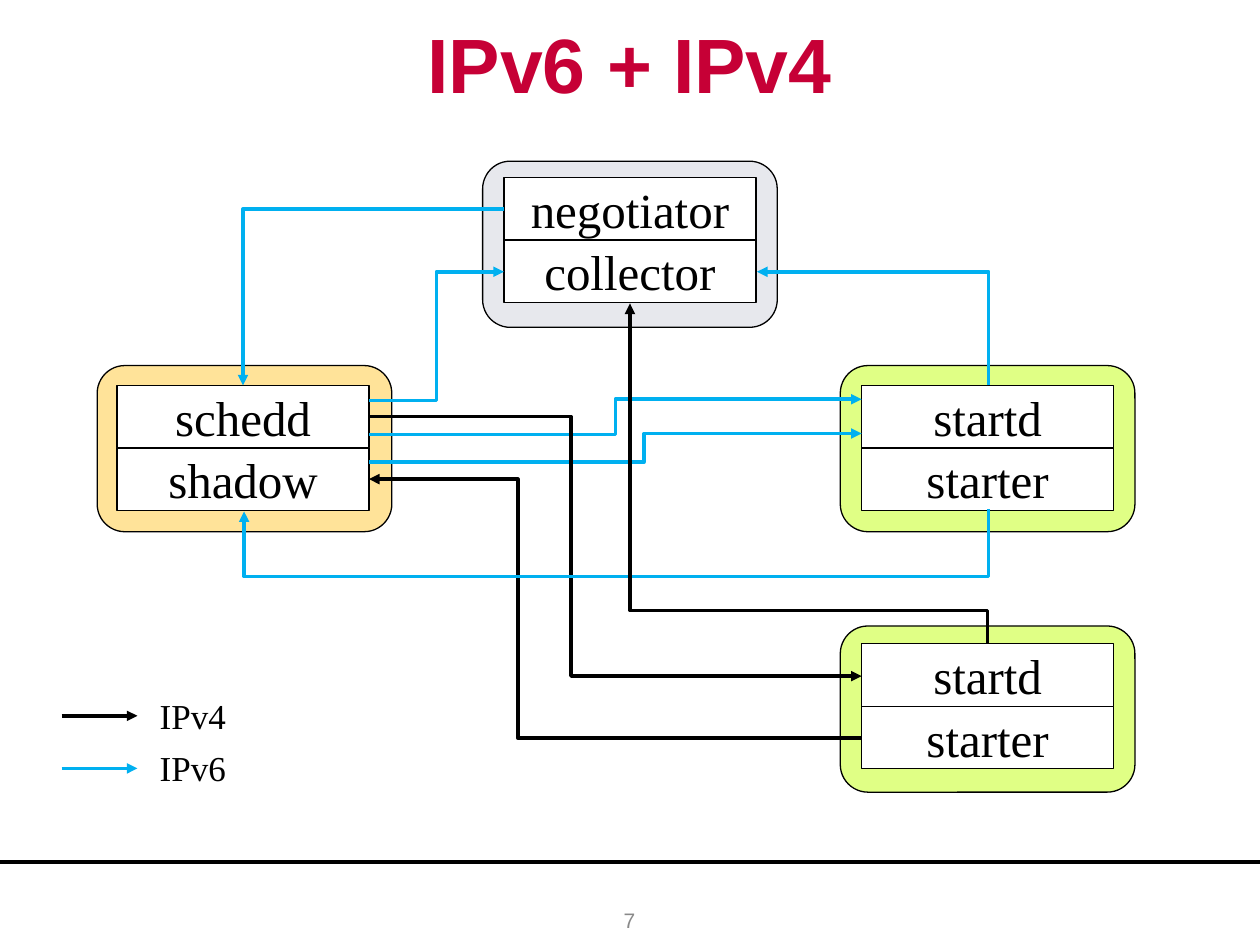
from lxml.etree import SubElement
from pptx import Presentation
from pptx.dml.color import RGBColor
from pptx.enum.shapes import MSO_CONNECTOR, MSO_SHAPE
from pptx.enum.text import MSO_ANCHOR, PP_ALIGN
from pptx.oxml.ns import qn
from pptx.util import Cm, Pt

BLACK, BLUE, WHITE = "000000", "00B0F0", "FFFFFF"
GREEN, ORANGE, GREY = "E0FF85", "FFE399", "E7E8ED"
SERIF, SANS = "Times New Roman", "Arial"
PROCESS_WIDTH, PROCESS_HEIGHT = 5.08, 1.26

# Machine: left, top, fill, left and top of the processes, their names
MACHINES = [
    (9.73, 3.25, GREY, 10.16, 3.58, ("negotiator", "collector")),
    (1.96, 7.37, ORANGE, 2.36, 7.77, ("schedd", "shadow")),
    (16.94, 7.37, GREEN, 17.37, 7.77, ("startd", "starter")),
    (16.94, 12.62, GREEN, 17.37, 12.98, ("startd", "starter")),
]

# Route: start, end, colour, position of the middle segment (None: one corner)
HORIZONTAL_ROUTES = [
    ((7.44, 8.08), (10.16, 5.48), BLUE, 8.8),
    ((10.16, 4.21), (4.9, 7.77), BLUE, None),
    ((7.44, 9.32), (17.37, 8.74), BLUE, 12.98),
    ((7.44, 8.76), (17.37, 8.05), BLUE, 12.41),
    ((17.37, 14.88), (7.44, 9.66), BLACK, 10.44),
    ((7.44, 8.4), (17.37, 13.63), BLACK, 11.51),
]
VERTICAL_ROUTES = [
    ((19.93, 7.77), (15.26, 5.48), BLUE, None),
    ((19.93, 10.27), (4.92, 10.31), BLUE, 11.62),
    ((19.91, 12.98), (12.7, 6.12), BLACK, 12.31),
]


def color(value):
    return RGBColor.from_string(value)


def write(shape, text, size, font, text_color, align, bold=False):
    frame = shape.text_frame
    frame.word_wrap = True
    frame.text = text
    paragraph = frame.paragraphs[0]
    paragraph.alignment = align
    paragraph.font.name = font
    paragraph.font.size = Pt(size)
    paragraph.font.bold = bold
    paragraph.font.color.rgb = color(text_color)


def add_text(slide, left, top, width, height, text, size, font, text_color,
             align=PP_ALIGN.CENTER, anchor=MSO_ANCHOR.MIDDLE, bold=False):
    box = slide.shapes.add_textbox(Cm(left), Cm(top), Cm(width), Cm(height))
    write(box, text, size, font, text_color, align, bold)
    box.text_frame.vertical_anchor = anchor


def add_box(slide, kind, left, top, width, height, fill):
    shape = slide.shapes.add_shape(kind, Cm(left), Cm(top), Cm(width), Cm(height))
    shape.shadow.inherit = False
    shape.fill.solid()
    shape.fill.fore_color.rgb = color(fill)
    shape.line.color.rgb = color(BLACK)
    shape.line.width = Pt(0.75)
    return shape


def add_machine(slide, left, top, fill, process_left, process_top, names):
    add_box(slide, MSO_SHAPE.ROUNDED_RECTANGLE, left, top, 5.94, 3.35, fill)
    for row, name in enumerate(names):
        process = add_box(slide, MSO_SHAPE.RECTANGLE, process_left,
                          process_top + row * PROCESS_HEIGHT,
                          PROCESS_WIDTH, PROCESS_HEIGHT, WHITE)
        write(process, name, 28, SERIF, BLACK, PP_ALIGN.CENTER)
        process.text_frame.vertical_anchor = MSO_ANCHOR.MIDDLE


def add_line(slide, kind, start, end, line_color, width=2, arrow=True):
    connector = slide.shapes.add_connector(
        kind, Cm(start[0]), Cm(start[1]), Cm(end[0]), Cm(end[1]))
    connector.line.color.rgb = color(line_color)
    connector.line.width = Pt(width)
    if arrow:
        SubElement(connector.line._get_or_add_ln(), qn("a:tailEnd"), type="triangle")
    SubElement(connector._element.spPr, qn("a:effectLst"))
    return connector


def bend(connector, fraction):
    """Place the middle segment, or leave a single corner."""
    geometry = connector._element.spPr.find(qn("a:prstGeom"))
    if fraction is None:
        geometry.set("prst", "bentConnector2")
        return
    guides = geometry.find(qn("a:avLst"))
    if guides is None:
        guides = SubElement(geometry, qn("a:avLst"))
    SubElement(guides, qn("a:gd"), name="adj1", fmla=f"val {round(fraction * 100000)}")


def add_horizontal_route(slide, start, end, line_color, middle):
    """An elbow arrow that leaves its start sideways."""
    connector = add_line(slide, MSO_CONNECTOR.ELBOW, start, end, line_color)
    bend(connector, middle and (middle - start[0]) / (end[0] - start[0]))


def add_vertical_route(slide, start, end, line_color, middle):
    """An elbow arrow that leaves its start up or down: a quarter turn."""
    width, height = end[0] - start[0], end[1] - start[1]
    center_x, center_y = start[0] + width / 2, start[1] + height / 2
    turn = 1 if height > 0 else -1
    connector = add_line(
        slide, MSO_CONNECTOR.ELBOW,
        (center_x - turn * height / 2, center_y + turn * width / 2),
        (center_x + turn * height / 2, center_y - turn * width / 2), line_color)
    transform = connector._element.spPr.find(qn("a:xfrm"))
    transform.set("rot", str(turn * 90 % 360 * 60000))
    bend(connector, middle and (middle - start[1]) / height)


def add_legend_entry(slide, y, name, line_color):
    add_line(slide, MSO_CONNECTOR.STRAIGHT, (1.24, y), (2.77, y), line_color)
    add_text(slide, 2.97, y - 0.56, 2.82, 1.12, name, 20, SERIF, BLACK,
             PP_ALIGN.LEFT, MSO_ANCHOR.TOP)


def main():
    presentation = Presentation()
    presentation.slide_width, presentation.slide_height = Cm(25.4), Cm(19.05)
    slide = presentation.slides.add_slide(presentation.slide_layouts[6])

    # Title and footer
    add_text(slide, 0, 0, 25.4, 2.54, "IPv6 + IPv4", 44, SANS, "C60036", bold=True)
    add_line(slide, MSO_CONNECTOR.STRAIGHT, (0, 17.37), (25.4, 17.37), BLACK,
             2.25, arrow=False)
    add_text(slide, 9.73, 18.03, 5.92, 1.02, "7", 12, SANS, "898989")

    # Machines with their processes
    for machine in MACHINES:
        add_machine(slide, *machine)

    # Connections
    for route in HORIZONTAL_ROUTES:
        add_horizontal_route(slide, *route)
    for route in VERTICAL_ROUTES:
        add_vertical_route(slide, *route)

    # Legend
    add_legend_entry(slide, 14.43, "IPv4", BLACK)
    add_legend_entry(slide, 15.49, "IPv6", BLUE)

    presentation.save("out.pptx")


if __name__ == "__main__":
    main()
